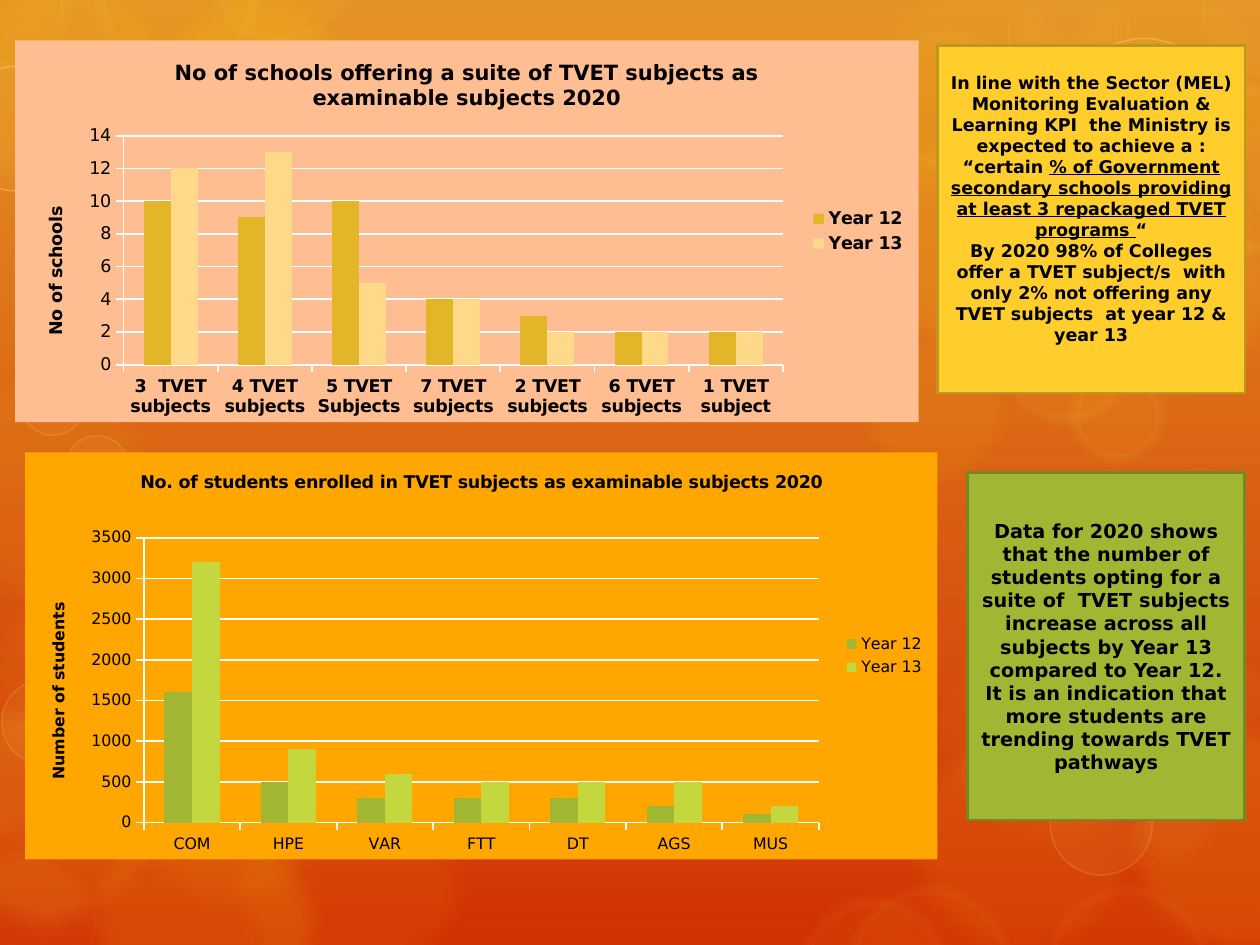
from lxml import etree
from pptx import Presentation
from pptx import util as u
from pptx.chart import data as chart_data
from pptx.dml import color
from pptx.enum import chart as charts, shapes, text
from pptx.oxml import ns

COLUMNS, ROWS = 100, 75
COLORS = {
    "top": "E39325", "bottom": "D13202", "glow": "FDC61B", "halo": "FEEBAE", "ring": "FFE281",
    "peach": "FFBD92", "orange": "FFA600", "yellow": "FFCE2D", "yellow_edge": "BD9821",
    "green": "A1B633", "green_edge": "778726", "lime": "C4D73F",
    "gold": "E3B529", "cream": "FFD98A", "white": "FFFFFF", "black": "000000",
}


class SlideBuilder:
    font = "DejaVu Sans"

    def __init__(self, presentation):
        self.width, self.height = presentation.slide_width, presentation.slide_height
        self.slide = presentation.slides.add_slide(presentation.slide_layouts[6])

    def color(self, name):
        return color.RGBColor.from_string(COLORS[name])

    def place(self, left, top, width, height):
        cell_width, cell_height = self.width / COLUMNS, self.height / ROWS
        return [u.Emu(round(value)) for value in
                (left * cell_width, top * cell_height, width * cell_width, height * cell_height)]

    def paint(self, fill, name):
        fill.solid()
        fill.fore_color.rgb = self.color(name)

    def style_font(self, font, size, bold=False):
        font.name, font.size, font.bold = self.font, u.Pt(size), bold
        font.color.rgb = self.color("black")

    def background(self, first, last):
        fill = self.slide.background.fill
        fill.gradient()
        fill.gradient_angle = 270
        for stop, name in zip(fill.gradient_stops, (first, last)):
            stop.color.rgb = self.color(name)

    def outlined_shape(self, kind, area, fill, line=None, weight=0):
        shape = self.slide.shapes.add_shape(kind, *self.place(*area))
        shape.shadow.inherit = False
        self.paint(shape.fill, fill)
        if line:
            self.paint(shape.line.fill, line)
            shape.line.width = u.Pt(weight)
        else:
            shape.line.fill.background()
        return shape

    def bubble(self, x, y, size, fill, opacity, line=None, weight=0, line_opacity=0, soft=0):
        area = (x - size / 2, y - size / 2, size, size)
        shape = self.outlined_shape(shapes.MSO_SHAPE.OVAL, area, fill, line, weight)
        properties = shape._element.spPr
        for paint, share in zip(properties.iter(ns.qn("a:srgbClr")), (opacity, line_opacity)):
            etree.SubElement(paint, ns.qn("a:alpha"), val=str(share * 1000))
        if soft:
            effects = properties.find(ns.qn("a:effectLst"))
            etree.SubElement(effects, ns.qn("a:softEdge"), rad=str(u.Pt(soft)))

    def text_panel(self, area, fill, line, size, paragraphs, bottom=0.05):
        shape = self.outlined_shape(shapes.MSO_SHAPE.RECTANGLE, area, fill, line, 1.5)
        frame = shape.text_frame
        frame.word_wrap = True
        frame.vertical_anchor = text.MSO_ANCHOR.MIDDLE
        frame.margin_bottom = u.Inches(bottom)
        for index, runs in enumerate(paragraphs):
            paragraph = frame.add_paragraph() if index else frame.paragraphs[0]
            paragraph.alignment = text.PP_ALIGN.CENTER
            for words, underlined in runs:
                run = paragraph.add_run()
                run.text = words
                self.style_font(run.font, size, True)
                run.font.underline = underlined

    def chart_title(self, owner, words, size):
        frame = owner.text_frame
        run = frame.paragraphs[0].add_run()
        run.text = words
        self.style_font(run.font, size, True)

    def plot_layout(self, chart, shares):
        plot_area = chart._chartSpace.chart.plotArea
        layout = plot_area.find(ns.qn("c:layout"))
        if layout is None:
            layout = etree.Element(ns.qn("c:layout"))
            plot_area.insert(0, layout)
        manual = etree.SubElement(layout, ns.qn("c:manualLayout"))
        settings = [("layoutTarget", "inner"), ("xMode", "edge"), ("yMode", "edge")]
        for name, value in settings + list(zip("xywh", shares)):
            etree.SubElement(manual, ns.qn("c:" + name), val=str(value))

    def column_chart(self, area, fill, title, title_size, axis_title, size, bold,
                     categories, series, maximum, step, plot_shares):
        data = chart_data.CategoryChartData()
        data.categories = categories
        for name, _, values in series:
            data.add_series(name, values)
        chart = self.slide.shapes.add_chart(
            charts.XL_CHART_TYPE.COLUMN_CLUSTERED, *self.place(*area), data).chart
        self.style_font(chart.font, size)
        chart.has_title = True
        self.chart_title(chart.chart_title, title, title_size)
        chart.chart_title.include_in_layout = False
        chart.has_legend = True
        chart.legend.position = charts.XL_LEGEND_POSITION.RIGHT
        chart.legend.include_in_layout = False
        self.style_font(chart.legend.font, size, bold)

        for axis, axis_bold in ((chart.category_axis, bold), (chart.value_axis, False)):
            axis.major_tick_mark = charts.XL_TICK_MARK.OUTSIDE
            axis.minor_tick_mark = charts.XL_TICK_MARK.NONE
            self.style_font(axis.tick_labels.font, size, axis_bold)
            self.paint(axis.format.line.fill, "white")
            axis.format.line.width = u.Pt(1)
        value_axis = chart.value_axis
        value_axis.minimum_scale, value_axis.maximum_scale = 0, maximum
        value_axis.major_unit = step
        value_axis.has_major_gridlines = True
        self.paint(value_axis.major_gridlines.format.line.fill, "white")
        value_axis.major_gridlines.format.line.width = u.Pt(1)
        value_axis.has_title = True
        self.chart_title(value_axis.axis_title, axis_title, size)

        plot = chart.plots[0]
        plot.gap_width, plot.overlap, plot.vary_by_categories = 150, 0, False
        for column, (_, name, _) in zip(plot.series, series):
            self.paint(column.format.fill, name)
        self.plot_layout(chart, plot_shares)
        space = chart._chartSpace
        properties = etree.Element(ns.qn("c:spPr"))
        solid = etree.SubElement(properties, ns.qn("a:solidFill"))
        etree.SubElement(solid, ns.qn("a:srgbClr"), val=COLORS[fill])
        line = etree.SubElement(properties, ns.qn("a:ln"))
        etree.SubElement(line, ns.qn("a:noFill"))
        space.chart.addnext(properties)


GLOWS = {
    8: [(7.9, 54.6), (18.2, 62.9), (27.8, 70.1), (3.5, 38.7)],
    10: [(16.1, 22.4), (30.9, 13.6), (77.3, 7.5), (81.1, 66.7), (92.4, 7.2)],
    14: [(4.9, 7.2)],
    15: [(10.5, 17.6), (92.4, 22.4), (77.3, 19.1)],
    16: [(16.1, 73.1), (98.5, 66.7), (3.6, 64.6)],
    20: [(20.5, 8.6)],
    5: [(83.3, 58.2)],
}
BUBBLES = [
    (("glow", 10, None, 0, 0, 8), [(74.2, 32.8, 13.3)]),
    (("glow", 10, "halo", 14, 6, 8),
     [(98.7, 13.4, 13.7), (75.1, 8, 11.4), (84.6, 28.1, 11.4), (88.7, 33, 7.9),
      (14, 0, 13.1), (22.1, -1.8, 11.4), (0, 0, 11.4)]),
    (("glow", 6, "halo", 14, 4, 8),
     [(10.7, 54.9, 15.3), (69.4, 77.3, 12.6), (73.8, 76.9, 13.7), (89.5, 76.9, 13.7)]),
    (("ring", 5, "ring", 1, 15, 0),
     [(3.5, 57.3, 6.7), (4.2, 32, 5.1), (7.7, 37.1, 5), (87.4, 65.4, 8.1)]),
    (("ring", 5, "ring", 1, 30, 0), [(1.3, 10.2, 9.9), (7.4, 23.9, 6.7), (90.8, 9.2, 12.3)]),
    (("ring", 5, "ring", 5, 15, 5),
     [(2.1, 73.2, 11.3), (0.5, 61.3, 9.8), (80.3, 61.3, 8.1), (93.3, 65.3, 6.6),
      (98, 55.4, 6), (95.3, 38.6, 3.3), (4.9, 38.9, 3.9)]),
    (("ring", 5, "ring", 5, 30, 5),
     [(10.2, 14.2, 10), (7.7, 20.1, 8.5), (4.5, 23.8, 5.7), (84.8, 2.6, 9.9),
      (100.3, 1, 10), (103, 13.2, 11)]),
]


def main():
    presentation = Presentation()
    presentation.slide_width, presentation.slide_height = u.Inches(10), u.Inches(7.5)
    builder = SlideBuilder(presentation)
    builder.background("top", "bottom")
    for opacity, centers in GLOWS.items():
        for x, y in centers:
            builder.bubble(x, y, 20.9, "glow", opacity, soft=12)
    for style, circles in BUBBLES:
        for circle in circles:
            builder.bubble(*circle, *style)

    builder.column_chart(
        (1.2, 3.2, 71.7, 30.3), "peach",
        "No of schools offering a suite of TVET subjects as examinable subjects 2020", 12,
        "No of schools", 10, True,
        ["3  TVET subjects", "4 TVET subjects", "5 TVET Subjects", "7 TVET subjects",
         "2 TVET subjects", "6 TVET subjects", "1 TVET subject"],
        [("Year 12", "gold", [10, 9, 10, 4, 3, 2, 2]),
         ("Year 13", "cream", [12, 13, 5, 4, 2, 2, 2])],
        14, 2, (0.12, 0.25, 0.73, 0.6))
    builder.text_panel((74.4, 3.6, 24.4, 27.6), "yellow", "yellow_edge", 10, [
        [("In line with the Sector (MEL) Monitoring Evaluation & Learning KPI  the Ministry "
          "is expected to achieve a :", False)],
        [("“certain ", False),
         ("% of Government secondary schools providing at least 3 repackaged TVET programs ", True),
         ("“", False)],
        [("By 2020 98% of Colleges offer a TVET subject/s  with only 2% not offering any "
          "TVET subjects  at year 12 & year 13", False)]], bottom=0.22)
    builder.column_chart(
        (2, 35.9, 72.4, 32.3), "orange",
        "No. of students enrolled in TVET subjects as examinable subjects 2020", 10,
        "Number of students", 9, False, ["COM", "HPE", "VAR", "FTT", "DT", "AGS", "MUS"],
        [("Year 12", "green", [1600, 500, 300, 300, 300, 200, 100]),
         ("Year 13", "lime", [3200, 900, 600, 500, 500, 500, 200])],
        3500, 500, (0.13, 0.21, 0.74, 0.7))
    builder.text_panel((76.8, 37.5, 22, 27.6), "green", "green_edge", 11, [
        [("Data for 2020 shows that the number of students opting for a suite of  TVET subjects "
          "increase across all subjects by Year 13 compared to Year 12.", False)],
        [("It is an indication that more students are trending towards TVET pathways", False)]])
    presentation.save("out.pptx")


if __name__ == "__main__":
    main()
